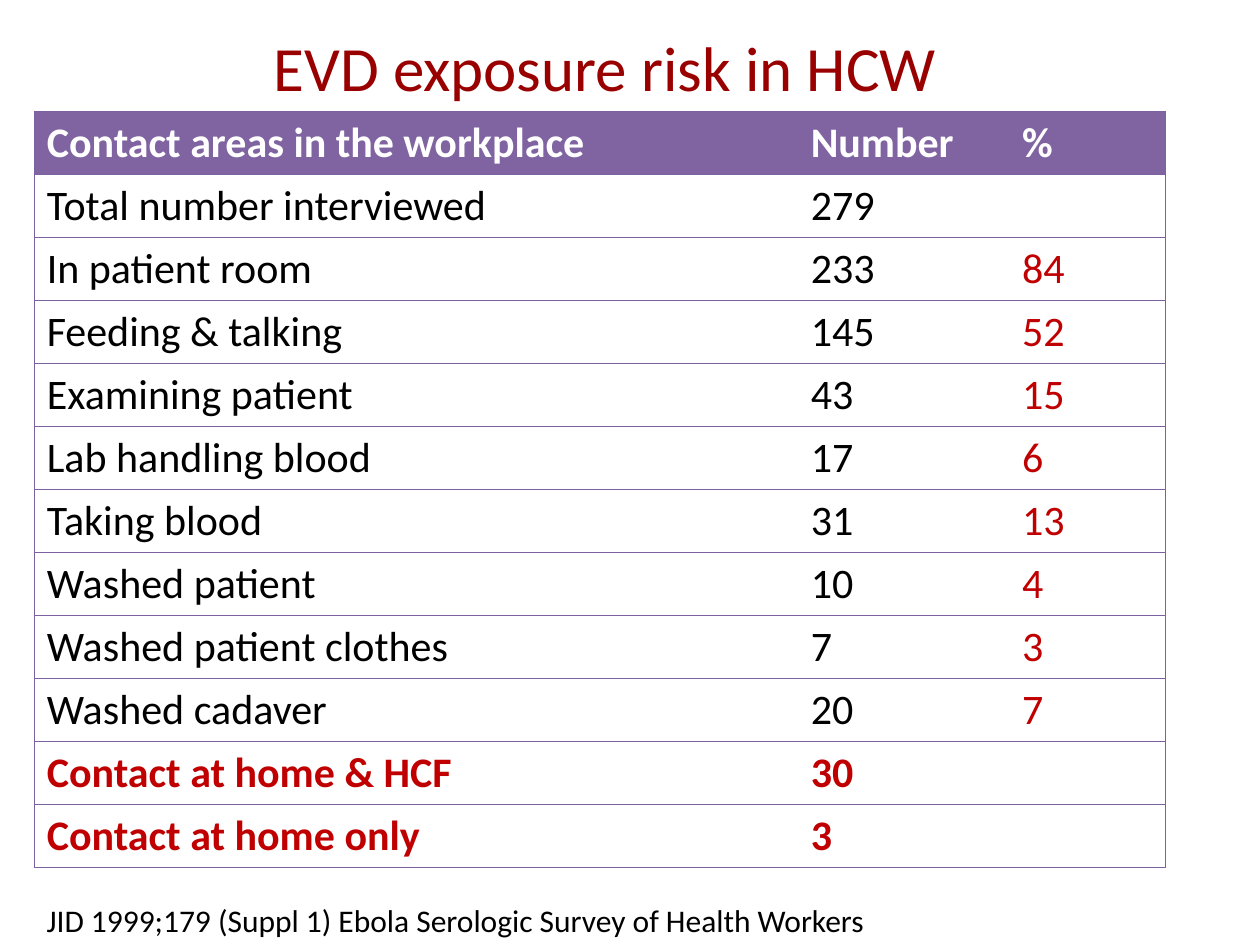
from lxml import etree
from pptx import Presentation
from pptx.dml.color import RGBColor
from pptx.enum.text import MSO_ANCHOR, PP_ALIGN
from pptx.oxml.ns import qn
from pptx.util import Cm, Pt

CENTER = PP_ALIGN.CENTER
MIDDLE = MSO_ANCHOR.MIDDLE
TITLE_ONLY = 5

COLORS = {
    "title": "990000",
    "text": "000000",
    "accent": "C00000",
    "header": "8064A2",
    "header_text": "FFFFFF",
    "border": "7D60A0",
}
HEADINGS = ("Contact areas in the workplace", "Number", "%")
CONTACTS = [
    ("Total number interviewed", "279", ""),
    ("In patient room", "233", "84"),
    ("Feeding & talking", "145", "52"),
    ("Examining patient", "43", "15"),
    ("Lab handling blood", "17", "6"),
    ("Taking blood", "31", "13"),
    ("Washed patient", "10", "4"),
    ("Washed patient clothes", "7", "3"),
    ("Washed cadaver", "20", "7"),
]
HOME_CONTACTS = [
    ("Contact at home & HCF", "30", ""),
    ("Contact at home only", "3", ""),
]


class SlideBuilder:
    """Holds the style and the current slide and adds elements to it."""

    def __init__(self, prs, font="Calibri"):
        self.font = font
        self.s = prs.slides.add_slide(prs.slide_layouts[TITLE_ONLY])

    def style(self, tf, size, color, bold=False):
        for p in tf.paragraphs:
            for r in p.runs:
                r.font.name = self.font
                r.font.size = Pt(size)
                r.font.bold = bold
                r.font.color.rgb = RGBColor.from_string(COLORS[color])

    def title(self, text, left, top, width, height):
        sp = self.s.shapes.title
        sp.left, sp.top, sp.width, sp.height = Cm(left), Cm(top), Cm(width), Cm(height)
        tf = sp.text_frame
        tf.text = text
        tf.vertical_anchor = MIDDLE
        tf.paragraphs[0].alignment = CENTER
        self.style(tf, 36, "title")

    def text(self, text, left, top, width, height):
        sp = self.s.shapes.add_textbox(Cm(left), Cm(top), Cm(width), Cm(height))
        tf = sp.text_frame
        tf.word_wrap = True
        tf.text = text
        self.style(tf, 18, "text")

    def borders(self, cell, visible):
        tcPr = cell._tc.get_or_add_tcPr()
        for side in "LRTB":
            ln = etree.SubElement(tcPr, qn(f"a:ln{side}"), w=str(Pt(0.75)))
            if side in visible:
                fill = etree.SubElement(ln, qn("a:solidFill"))
                etree.SubElement(fill, qn("a:srgbClr"), val=COLORS["border"])
            else:
                etree.SubElement(ln, qn("a:noFill"))

    def table(self, rows, left, top, widths, row_height):
        frame = self.s.shapes.add_table(
            len(rows), len(widths), Cm(left), Cm(top),
            Cm(sum(widths)), Cm(row_height * len(rows)))
        table = frame.table
        table.horz_banding = False
        for column, width in zip(table.columns, widths):
            column.width = Cm(width)
        first_home = len(rows) - len(HOME_CONTACTS)
        for i, values in enumerate(rows):
            table.rows[i].height = Cm(row_height)
            for j, value in enumerate(values):
                cell = table.cell(i, j)
                cell.text_frame.text = value
                outer = {0: "L", len(widths) - 1: "R"}.get(j, "")
                self.borders(cell, "TB" + outer)
                if i == 0:
                    cell.fill.solid()
                    cell.fill.fore_color.rgb = RGBColor.from_string(COLORS["header"])
                    color = "header_text"
                else:
                    cell.fill.background()
                    color = "accent" if j == 2 or i >= first_home else "text"
                self.style(cell.text_frame, 24, color, i == 0 or i >= first_home)


def main():
    prs = Presentation()
    prs.slide_width, prs.slide_height = Cm(25.4), Cm(19.05)
    slide = SlideBuilder(prs)
    slide.title("EVD exposure risk in HCW", 2.29, 0.33, 19.81, 2)
    slide.text("JID 1999;179 (Suppl 1) Ebola Serologic Survey of Health Workers",
               0.69, 18.03, 17.8, 1.02)
    slide.table([HEADINGS] + CONTACTS + HOME_CONTACTS,
                0.69, 2.24, (15.4, 4.26, 3.15), 1.27)
    prs.save("out.pptx")


if __name__ == "__main__":
    main()
